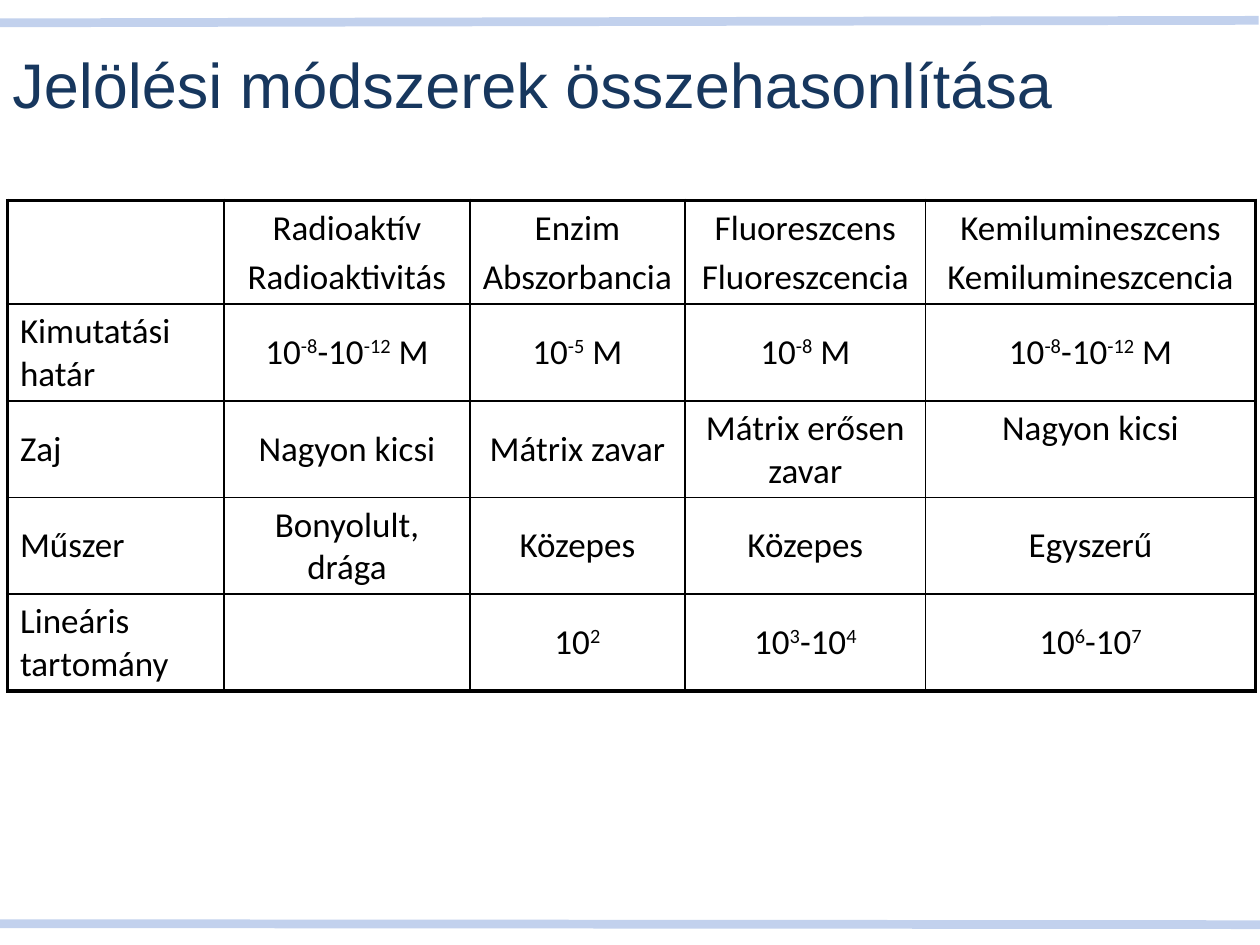
from lxml.etree import SubElement
from pptx import Presentation
from pptx.dml.color import RGBColor
from pptx.enum.shapes import MSO_CONNECTOR
from pptx.enum.text import MSO_ANCHOR, PP_ALIGN
from pptx.oxml.ns import qn
from pptx.util import Cm, Pt

BLACK = "000000"
THICK, THIN = 2.25, 1
COLUMN_WIDTHS = [4.37, 4.95, 4.34, 4.85, 6.65]
ROW_HEIGHTS = [2.08, 1.83, 1.88, 1.88, 1.8]
ROWS = [
    ["", "Radioaktív\nRadioaktivitás", "Enzim\nAbszorbancia",
     "Fluoreszcens\nFluoreszcencia", "Kemilumineszcens\nKemilumineszcencia"],
    ["Kimutatási határ", "10^-8^-10^-12^ M", "10^-5^ M", "10^-8^ M", "10^-8^-10^-12^ M"],
    ["Zaj", "Nagyon kicsi", "Mátrix zavar", "Mátrix erősen zavar", "Nagyon kicsi"],
    ["Műszer", "Bonyolult, drága", "Közepes", "Közepes", "Egyszerű"],
    ["Lineáris tartomány", "", "10^2^", "10^3^-10^4^", "10^6^-10^7^"],
]


def color(value):
    """Return the colour for a hex string."""
    return RGBColor.from_string(value)


def write_text(frame, text, *, font, size, fill, align=PP_ALIGN.LEFT, gap=0):
    """Write paragraphs split at newlines, with superscripts between carets."""
    for index, line in enumerate(text.split("\n")):
        paragraph = frame.add_paragraph() if index else frame.paragraphs[0]
        paragraph.alignment = align
        paragraph.space_before = Pt(gap if index else 0)
        paragraph.font.size = Pt(size)
        for position, part in enumerate(line.split("^")):
            if not part:
                continue
            run = paragraph.add_run()
            run.text = part
            run.font.name = font
            run.font.size = Pt(size)
            run.font.color.rgb = color(fill)
            if position % 2:
                run.font._element.set("baseline", "30000")


def add_rule(slide, start, end):
    """Add a pale rule across the slide."""
    rule = slide.shapes.add_connector(
        MSO_CONNECTOR.STRAIGHT, *map(Cm, start), *map(Cm, end))
    rule.line.color.rgb = color("C2D1ED")
    rule.line.width = Pt(5)
    SubElement(rule._element.spPr, qn("a:effectLst"))


def add_title(slide, text):
    """Add the slide heading."""
    box = slide.shapes.add_textbox(Cm(0), Cm(0.71), Cm(22.86), Cm(1.93))
    box.text_frame.word_wrap = True
    box.text_frame.vertical_anchor = MSO_ANCHOR.MIDDLE
    write_text(box.text_frame, text, font="Arial", size=36, fill="17375E")


def set_borders(cell, widths):
    """Draw the left, right, top and bottom borders of a cell."""
    properties = cell._tc.get_or_add_tcPr()
    for side, width in zip("LRTB", widths):
        line = SubElement(properties, qn(f"a:ln{side}"), w=str(Pt(width)))
        fill = SubElement(line, qn("a:solidFill"))
        SubElement(fill, qn("a:srgbClr"), val=BLACK)


def add_comparison_table(slide):
    """Add the table of labelling methods with a thick outer frame."""
    last_row, last_column = len(ROWS) - 1, len(COLUMN_WIDTHS) - 1
    table = slide.shapes.add_table(
        len(ROWS), len(COLUMN_WIDTHS), Cm(0.15), Cm(4.04),
        Cm(sum(COLUMN_WIDTHS)), Cm(sum(ROW_HEIGHTS))).table
    table.first_row = table.horz_banding = False
    for column, width in zip(table.columns, COLUMN_WIDTHS):
        column.width = Cm(width)
    for row, height in zip(table.rows, ROW_HEIGHTS):
        row.height = Cm(height)
    for row, texts in enumerate(ROWS):
        for column, text in enumerate(texts):
            cell = table.cell(row, column)
            outer = (column == 0, column == last_column, row == 0, row == last_row)
            set_borders(cell, [THICK if edge else THIN for edge in outer])
            cell.fill.background()
            cell.vertical_anchor = MSO_ANCHOR.MIDDLE
            write_text(cell.text_frame, text, font="Calibri", size=20, fill=BLACK,
                       align=PP_ALIGN.CENTER if column else PP_ALIGN.LEFT, gap=4)
    table.cell(2, last_column).vertical_anchor = MSO_ANCHOR.TOP


def main():
    """Build and save the slide."""
    presentation = Presentation()
    presentation.slide_width, presentation.slide_height = Cm(25.4), Cm(19.05)
    slide = presentation.slides.add_slide(presentation.slide_layouts[6])
    add_rule(slide, (-0.05, 0.46), (25.37, 0.41))
    add_rule(slide, (0, 18.62), (25.5, 18.64))
    add_title(slide, "Jelölési módszerek összehasonlítása")
    add_comparison_table(slide)
    presentation.save("out.pptx")


if __name__ == "__main__":
    main()
